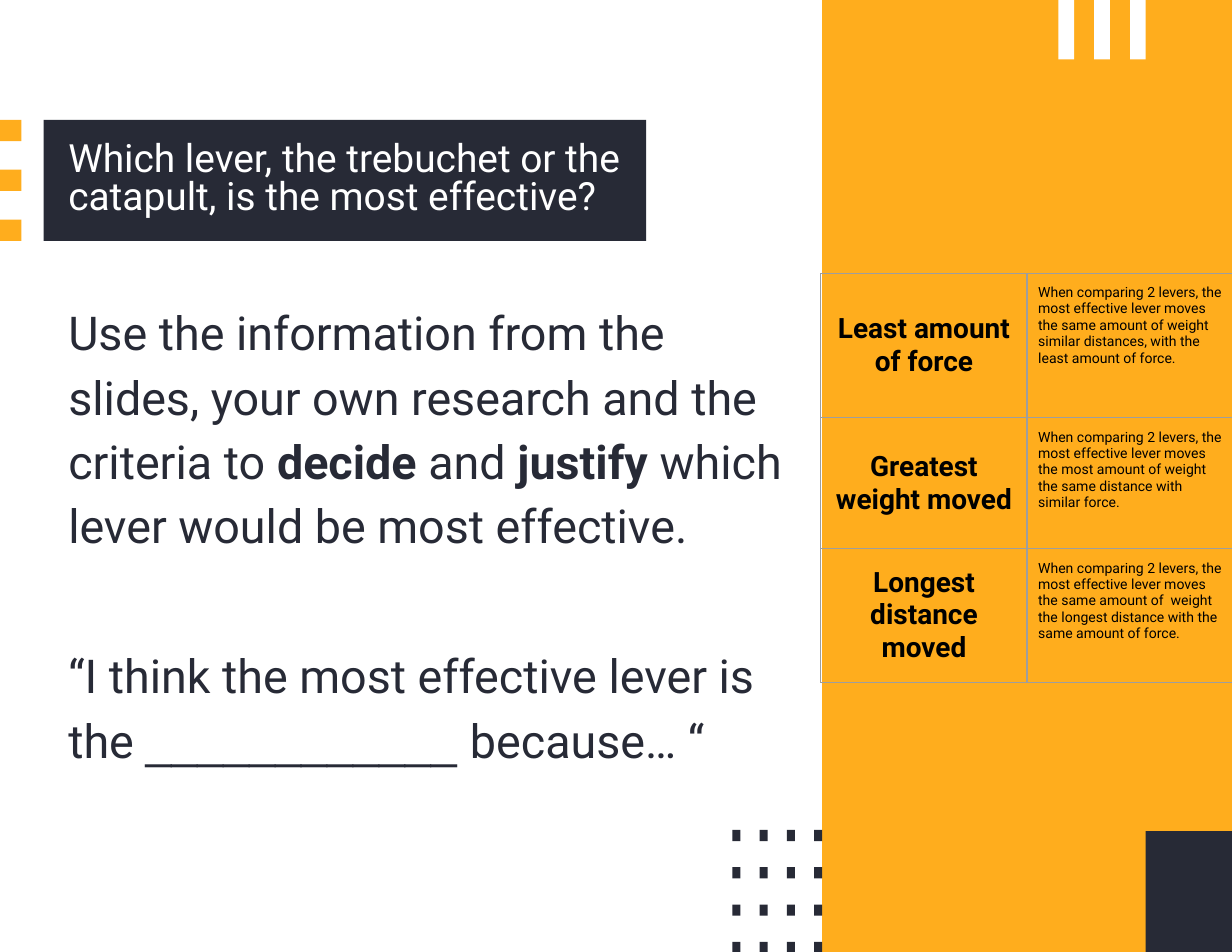
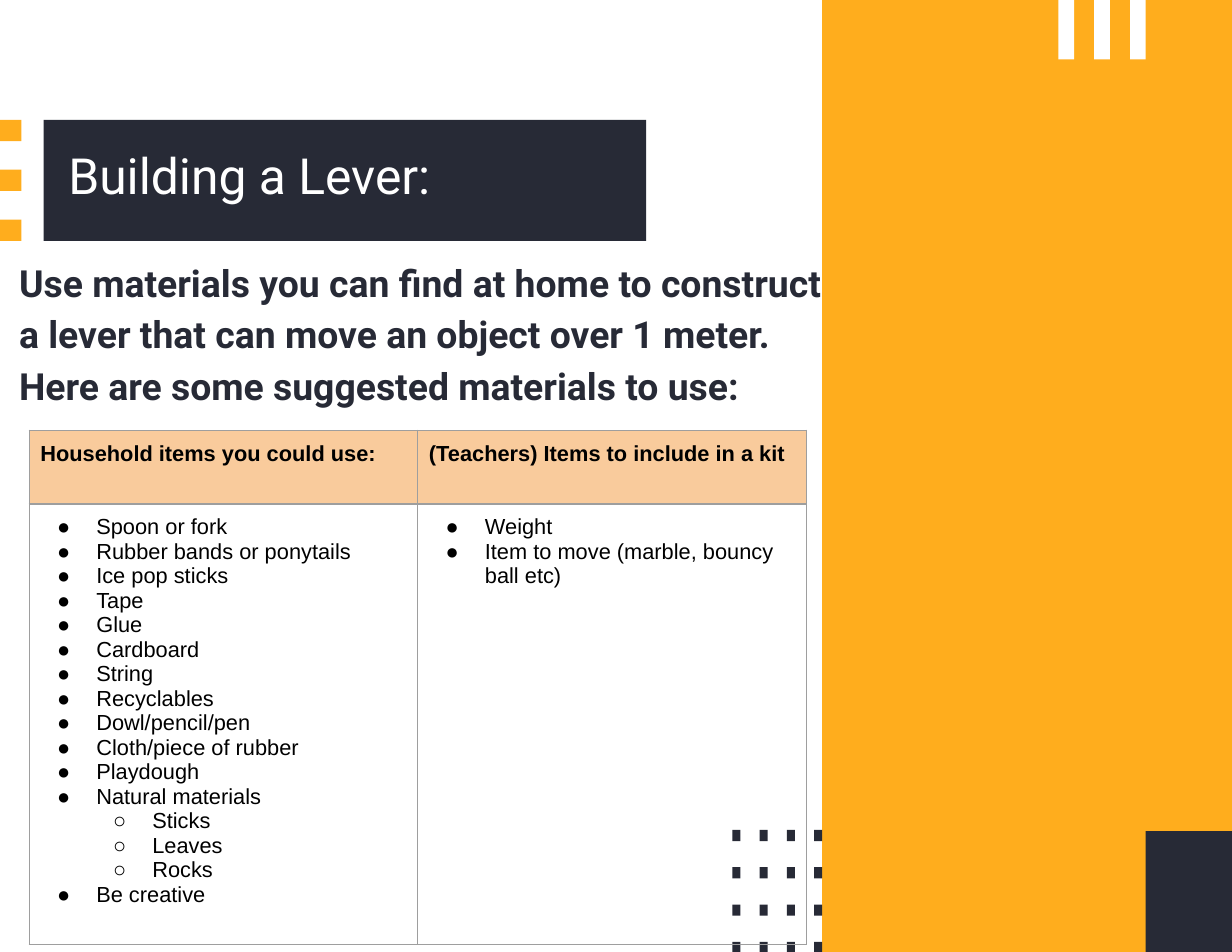
from lxml import etree
from pptx import Presentation
from pptx.dml.color import RGBColor
from pptx.enum import shapes, text
from pptx.oxml import ns
from pptx.util import Inches, Pt

ORANGE = RGBColor(0xFF, 0xAD, 0x1D)
NAVY = RGBColor(0x27, 0x2A, 0x36)
WHITE = RGBColor(0xFF, 0xFF, 0xFF)
BLACK = RGBColor(0, 0, 0)
PEACH = RGBColor(0xF9, 0xCB, 0x9C)
BORDER_GRAY = "9E9E9E"
BAND_TOP, BAND_HEIGHT, SQUARE = 1.07, 1.08, 0.19


def add_text(slide, place, paragraphs, size, color, line_spacing,
             anchor=text.MSO_ANCHOR.TOP):
    """Add a text box; each paragraph is (space before, [(text, bold, font), ...])."""
    frame = slide.shapes.add_textbox(*map(Inches, place)).text_frame
    frame.word_wrap = True
    frame.vertical_anchor = anchor
    frame.margin_left = frame.margin_right = frame.margin_top = frame.margin_bottom = 0
    for index, (space_before, runs) in enumerate(paragraphs):
        paragraph = frame.add_paragraph() if index else frame.paragraphs[0]
        paragraph.line_spacing = line_spacing
        paragraph.space_before = Pt(space_before)
        paragraph.font.size = Pt(size)
        paragraph.font.color.rgb = color
        for words, bold, font_name in runs:
            run = paragraph.add_run()
            run.text = words
            run.font.bold = bold
            run.font.name = font_name


def add_bordered_table(slide, left, top, column_width, row_heights):
    """Add a two-column table with thin gray borders and no fill."""
    table = slide.shapes.add_table(
        len(row_heights), 2, Inches(left), Inches(top),
        Inches(2 * column_width), Inches(sum(row_heights))).table
    table.first_row = table.horz_banding = False
    for column in table.columns:
        column.width = Inches(column_width)
    for row, height in zip(table.rows, row_heights):
        row.height = Inches(height)
    for cell in table.iter_cells():
        cell.margin_left = cell.margin_right = Inches(0.1)
        cell.margin_top = cell.margin_bottom = Inches(0.1)
        cell.fill.background()
        properties = cell._tc.get_or_add_tcPr()
        for position, side in enumerate(("lnL", "lnR", "lnT", "lnB")):
            line = etree.Element(ns.qn(f"a:{side}"), w=str(Pt(0.75)))
            fill = etree.SubElement(line, ns.qn("a:solidFill"))
            etree.SubElement(fill, ns.qn("a:srgbClr"), val=BORDER_GRAY)
            properties.insert(position, line)
    return table


presentation = Presentation()
presentation.slide_width = Inches(11)
presentation.slide_height = Inches(8.5)

# Decoration and title band shared by both slides
decoration = [
    (7.34, 0, 3.66, 8.5, ORANGE),
    (10.23, 7.42, 0.77, 1.08, NAVY),
    (0.39, BAND_TOP, 5.38, BAND_HEIGHT, NAVY),
]
for i in range(3):
    square_top = BAND_TOP + i * (BAND_HEIGHT - SQUARE) / 2
    decoration.append((0, square_top, SQUARE, SQUARE, ORANGE))
    decoration.append((9.45 + 0.32 * i, 0, 0.14, 0.53, WHITE))
for row in range(4):
    for column in range(4):
        decoration.append((6.54 + column * 0.73 / 3, 7.41 + row / 3, 0.07, 0.1, NAVY))

titles = [("Which lever, the trebuchet or the catapult, is the most effective?", 25),
          ("Building a Lever:", 32)]
slides = []
for title, size in titles:
    slide = presentation.slides.add_slide(presentation.slide_layouts[6])
    for left, top, width, height, color in decoration:
        shape = slide.shapes.add_shape(
            shapes.MSO_SHAPE.RECTANGLE,
            Inches(left), Inches(top), Inches(width), Inches(height))
        shape.shadow.inherit = False
        shape.fill.solid()
        shape.fill.fore_color.rgb = color
        shape.line.fill.background()
    add_text(slide, (0.61, BAND_TOP, 5.15, BAND_HEIGHT), [(0, [(title, False, "Roboto")])],
             size, WHITE, 0.8, text.MSO_ANCHOR.MIDDLE)
    slides.append(slide)
effectiveness_slide, building_slide = slides

# Slide 1: task and criteria
add_text(effectiveness_slide, (0.61, 2.64, 6.46, 5.77), [
    (7, [("Use the information from the slides, your own research and the criteria to ",
          False, "Roboto"),
         ("decide", True, "Roboto"),
         (" and ", False, "Roboto"),
         ("justify", True, "Roboto"),
         (" which lever would be most effective.", False, "Roboto")]),
    (55, [("“I think the most effective lever is the ", False, "Roboto"),
          ("____________ ", False, "Arial"),
          ("because… “", False, "Roboto")]),
], 30, NAVY, 1.15)

criteria = [
    ("Least amount of force",
     "the same amount of weight similar distances, with the least amount of force."),
    ("Greatest weight moved",
     "the most amount of weight the same distance with similar force."),
    ("Longest distance moved",
     "the same amount of  weight the longest distance with the same amount of force."),
]
table = add_bordered_table(effectiveness_slide, 7.33, 2.44, 1.84, (1.29, 1.17, 1.19))
for row, (criterion, explanation) in enumerate(criteria):
    name_cell, explanation_cell = table.cell(row, 0), table.cell(row, 1)
    name_cell.text = criterion
    name_cell.vertical_anchor = text.MSO_ANCHOR.MIDDLE
    name_cell.text_frame.paragraphs[0].alignment = text.PP_ALIGN.CENTER
    explanation_cell.text = ("When comparing 2 levers, the most effective lever moves "
                             + explanation)
    for cell, size, bold in ((name_cell, 18, True), (explanation_cell, 9, False)):
        font = cell.text_frame.paragraphs[0].font
        font.name, font.size, font.bold = "Roboto", Pt(size), bold
        font.color.rgb = BLACK

# Slide 2: materials
add_text(building_slide, (0.17, 2.26, 7.21, 1.7), [
    (7, [("Use materials you can find at home to construct a lever that can move an "
          "object over 1 meter. Here are some suggested materials to use:",
          True, "Roboto")]),
], 24, NAVY, 1.15)

materials = [
    ("Household items you could use:",
     [(0, "Spoon or fork"), (0, "Rubber bands or ponytails"), (0, "Ice pop sticks"),
      (0, "Tape"), (0, "Glue"), (0, "Cardboard"), (0, "String"), (0, "Recyclables"),
      (0, "Dowl/pencil/pen"), (0, "Cloth/piece of rubber"), (0, "Playdough"),
      (0, "Natural materials"), (1, "Sticks"), (1, "Leaves"), (1, "Rocks"),
      (0, "Be creative")]),
    ("(Teachers) Items to include in a kit",
     [(0, "Weight"), (0, "Item to move (marble, bouncy ball etc)")]),
]
table = add_bordered_table(building_slide, 0.26, 3.84, 3.47, (0.66, 3.14))
for column, (heading, items) in enumerate(materials):
    heading_cell, items_cell = table.cell(0, column), table.cell(1, column)
    heading_cell.text = heading
    heading_cell.fill.solid()
    heading_cell.fill.fore_color.rgb = PEACH
    items_cell.text = "\n".join(item for level, item in items)
    for paragraph, (level, item) in zip(items_cell.text_frame.paragraphs, items):
        paragraph.level = level
        properties = paragraph._p.get_or_add_pPr()
        properties.set("marL", str(Inches(0.5 * (level + 1))))
        properties.set("indent", str(Inches(-0.35)))
        bullet_color = etree.SubElement(properties, ns.qn("a:buClr"))
        etree.SubElement(bullet_color, ns.qn("a:srgbClr"), val=str(BLACK))
        etree.SubElement(properties, ns.qn("a:buSzPts"), val="1400")
        etree.SubElement(properties, ns.qn("a:buFont"), typeface="Arial")
        etree.SubElement(properties, ns.qn("a:buChar"), char="●○"[level])
    for cell, bold in ((heading_cell, True), (items_cell, False)):
        for paragraph in cell.text_frame.paragraphs:
            # Bullets take their size from the run, so the font is set there
            font = paragraph.runs[0].font
            font.name, font.size, font.bold = "Arial", Pt(14), bold
            font.color.rgb = BLACK

presentation.save("out.pptx")
